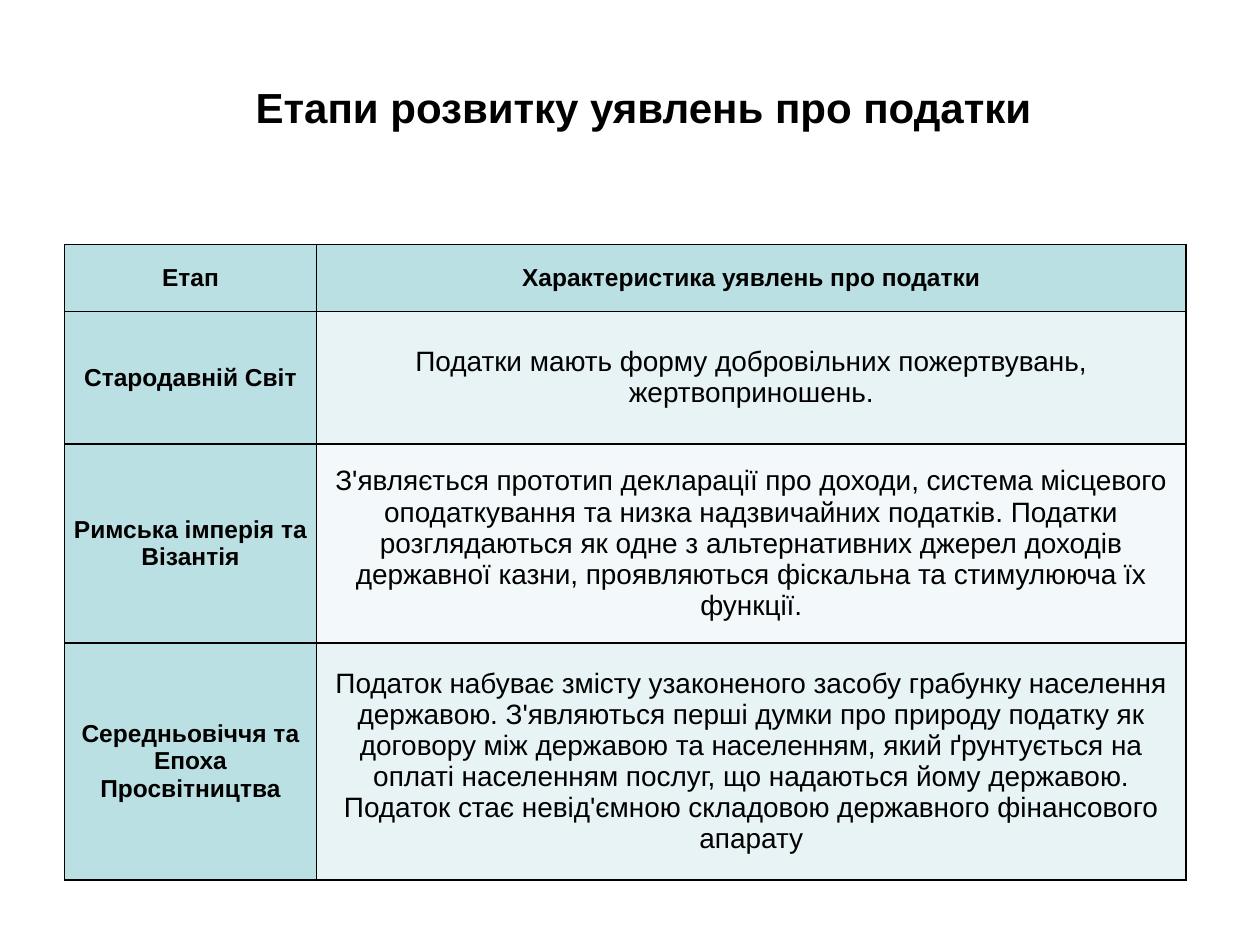
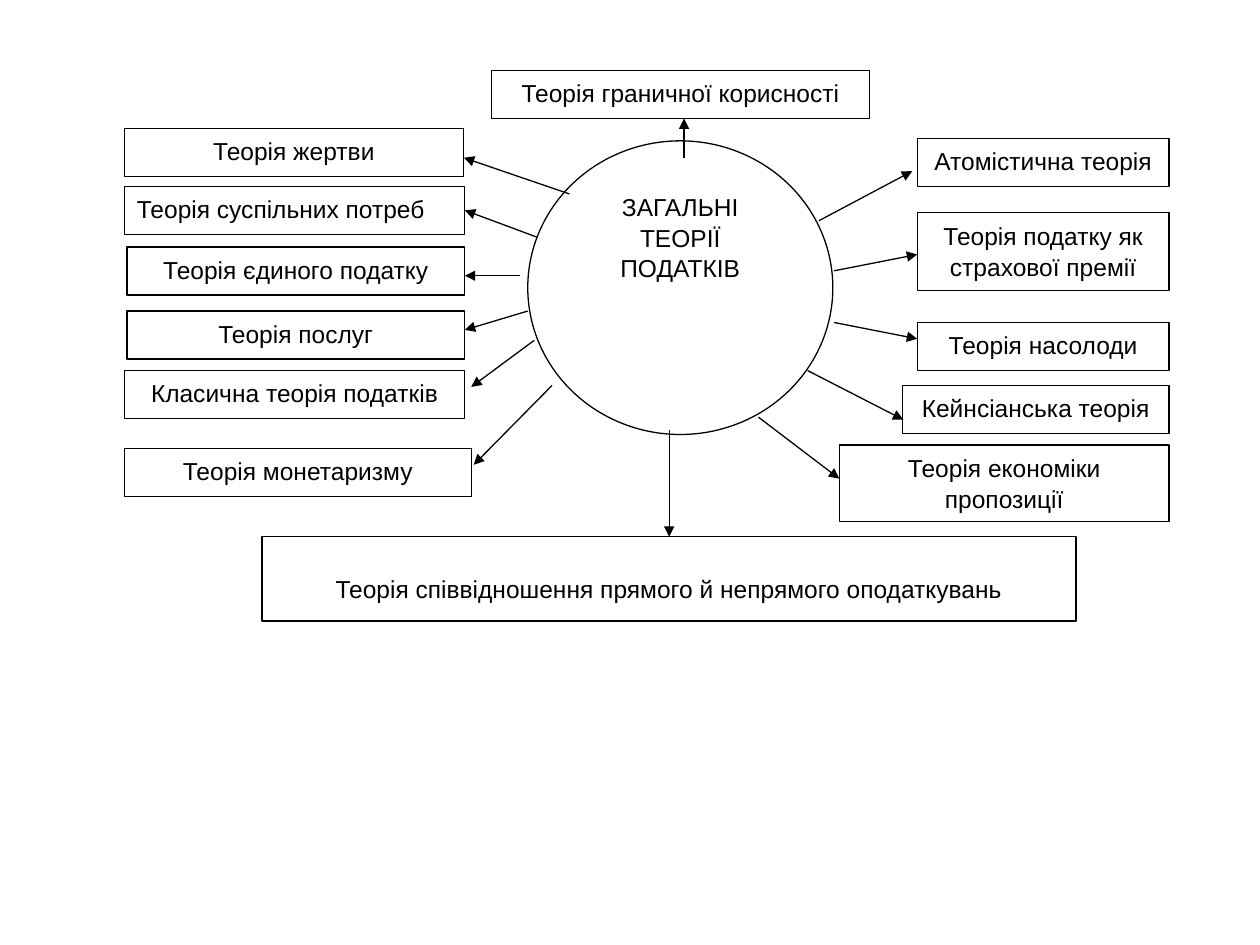
from dataclasses import dataclass

from lxml.etree import SubElement
from pptx import Presentation
from pptx.dml.color import RGBColor
from pptx.enum.shapes import MSO_CONNECTOR, MSO_SHAPE
from pptx.enum.text import MSO_ANCHOR, MSO_AUTO_SIZE, PP_ALIGN
from pptx.oxml.ns import qn
from pptx.util import Cm, Pt

BLACK = RGBColor(0x00, 0x00, 0x00)
WHITE = RGBColor(0xFF, 0xFF, 0xFF)
TEAL = RGBColor(0xBB, 0xE0, 0xE3)
ROW_TINTS = (RGBColor(0xE7, 0xF3, 0xF4), RGBColor(0xF3, 0xF9, 0xFA))

TITLE_FONT = {"name": "Arial", "size": Pt(24), "bold": True}
HEADING_FONT = {"name": "Arial", "size": Pt(14), "bold": True}
BODY_FONT = {"name": "Arial", "size": Pt(16), "bold": False}
THEORY_FONT = {"name": "Arial", "size": Pt(14), "bold": False}

TITLE_ONLY, BLANK = 5, 6

# Slide regions: left, top, width, height in cm
TITLE_BOX = (4.9, 1.52, 18.08, 1.27)
STAGES_BOX = (1.3, 4.93, 22.61, 12.81)
THEORIES_BOX = (2.51, 1.42, 21.06, 11.1)

STAGE_COLUMN = 5.08
STAGE_ROWS = (1.35, 2.67, 4.01, 4.78)
STAGES = (
    ("Етап", "Характеристика уявлень про податки"),
    ("Стародавній Світ",
     "Податки мають форму добровільних пожертвувань, жертвоприношень."),
    ("Римська імперія та Візантія",
     "З'являється прототип декларації про доходи, система місцевого "
     "оподаткування та низка надзвичайних податків. Податки розглядаються "
     "як одне з альтернативних джерел доходів державної казни, проявляються "
     "фіскальна та стимулююча їх функції."),
    ("Середньовіччя та Епоха Просвітництва",
     "Податок набуває змісту узаконеного засобу грабунку населення державою. "
     "З'являються перші думки про природу податку як договору між державою "
     "та населенням, який ґрунтується на оплаті населенням послуг, що "
     "надаються йому державою. Податок стає невід'ємною складовою "
     "державного фінансового апарату"),
)

LINE_HEIGHT = 0.97
HUB_BOX = (8.13, 1.42, 6.15, 5.92)


@dataclass
class Theory:
    """A boxed theory; its box and arrow are in cm within the diagram."""
    name: str
    box: tuple
    start: tuple
    end: tuple
    align: PP_ALIGN = PP_ALIGN.CENTER
    inset_top: float = 0.13


def right_box(top, width, height=LINE_HEIGHT):
    """Box that ends at the right edge of the diagram."""
    return THEORIES_BOX[2] - width, top, width, height


THEORIES = (
    Theory("Теорія граничної корисності", (7.4, 0, 7.62, LINE_HEIGHT),
           (11.28, 1.76), (11.28, 0.97)),
    Theory("Теорія жертви", (0, 1.17, 6.83, LINE_HEIGHT),
           (8.97, 2.49), (6.84, 1.76)),
    Theory("Теорія суспільних потреб", (0, 2.34, 6.86, LINE_HEIGHT),
           (8.31, 3.36), (6.86, 2.82), align=PP_ALIGN.LEFT),
    Theory("Теорія єдиного податку", (0.05, 3.56, 6.81, LINE_HEIGHT),
           (7.98, 4.14), (6.86, 4.14)),
    Theory("Теорія послуг", (0.05, 4.85, 6.81, LINE_HEIGHT),
           (8.13, 4.85), (6.86, 5.23)),
    Theory("Класична теорія податків", (0, 6.05, 6.86, LINE_HEIGHT),
           (8.26, 5.44), (6.99, 6.38)),
    Theory("Теорія монетаризму", (0, 7.62, 6.99, LINE_HEIGHT),
           (8.62, 6.35), (7.04, 7.95)),
    Theory("Атомістична теорія", right_box(1.37, 5.08),
           (14, 3.03), (15.88, 2.03)),
    Theory("Теорія податку як страхової премії", right_box(2.87, 5.08, 1.57),
           (14.3, 4.04), (15.98, 3.71)),
    Theory("Теорія насолоди", right_box(5.08, 5.08),
           (14.3, 5.08), (15.98, 5.41)),
    Theory("Кейнсіанська теорія", right_box(6.35, 5.38),
           (13.77, 6.05), (15.7, 7.04)),
    Theory("Теорія економіки пропозиції", right_box(7.55, 6.65, 1.55),
           (12.78, 6.99), (14.41, 8.23)),
    Theory("Теорія співвідношення прямого й непрямого оподаткувань",
           (2.77, 9.4, 16.41, 1.7), (10.98, 7.24), (10.98, 9.4),
           inset_top=0.73),
)


def set_all(target, values):
    for attribute, value in values.items():
        setattr(target, attribute, value)


def write(frame, text, font, align=PP_ALIGN.CENTER, line_spacing=None):
    frame.text = text
    for paragraph in frame.paragraphs:
        set_all(paragraph, {"alignment": align, "line_spacing": line_spacing})
        for run in paragraph.runs:
            set_all(run.font, font)
            run.font.color.rgb = BLACK


def add_title(slide, text, box):
    title = slide.shapes.title
    set_all(title, dict(zip(("left", "top", "width", "height"), map(Cm, box))))
    set_all(title.text_frame, {"vertical_anchor": MSO_ANCHOR.TOP,
                               "auto_size": MSO_AUTO_SIZE.NONE,
                               "word_wrap": True})
    write(title.text_frame, text, TITLE_FONT, PP_ALIGN.LEFT)


def add_cell_borders(cell):
    properties = cell._tc.get_or_add_tcPr()
    for index, side in enumerate(("a:lnL", "a:lnR", "a:lnT", "a:lnB")):
        border = properties.makeelement(qn(side), {"w": str(Pt(1))})
        fill = SubElement(border, qn("a:solidFill"))
        SubElement(fill, qn("a:srgbClr"), val=str(BLACK))
        properties.insert(index, border)


def add_stages_table(slide, box):
    table = slide.shapes.add_table(len(STAGES), 2, *map(Cm, box)).table
    table.columns[0].width = Cm(STAGE_COLUMN)
    table.columns[1].width = Cm(box[2] - STAGE_COLUMN)
    for row, (height, texts) in enumerate(zip(STAGE_ROWS, STAGES)):
        table.rows[row].height = Cm(height)
        for column, text in enumerate(texts):
            heading = row == 0 or column == 0
            cell = table.cell(row, column)
            set_all(cell, {"margin_left": 0, "margin_right": 0,
                           "margin_top": 0, "margin_bottom": 0,
                           "vertical_anchor": MSO_ANCHOR.MIDDLE})
            cell.fill.solid()
            cell.fill.fore_color.rgb = TEAL if heading else ROW_TINTS[(row - 1) % 2]
            write(cell.text_frame, text, HEADING_FONT if heading else BODY_FONT)
            add_cell_borders(cell)


def add_outlined(slide, preset, box, text, align=PP_ALIGN.CENTER, inset_top=0.13):
    shape = slide.shapes.add_shape(preset, *map(Cm, box))
    shape.shadow.inherit = False
    shape.fill.solid()
    shape.fill.fore_color.rgb = WHITE
    shape.line.color.rgb = BLACK
    shape.line.width = Pt(0.75)
    set_all(shape.text_frame, {"word_wrap": True, "margin_top": Cm(inset_top),
                               "vertical_anchor": MSO_ANCHOR.TOP})
    write(shape.text_frame, text, THEORY_FONT, align, line_spacing=1.05)


def add_arrow(slide, start, end):
    arrow = slide.shapes.add_connector(MSO_CONNECTOR.STRAIGHT,
                                       *map(Cm, (*start, *end)))
    arrow.line.color.rgb = BLACK
    arrow.line.width = Pt(0.75)
    SubElement(arrow.line._get_or_add_ln(), qn("a:tailEnd"), type="triangle")
    SubElement(arrow._element.spPr, qn("a:effectLst"))


def add_theories_diagram(slide, box):
    left, top = box[:2]

    def place(x, y, *size):
        return left + x, top + y, *size

    add_outlined(slide, MSO_SHAPE.OVAL, place(*HUB_BOX),
                 "ЗАГАЛЬНІ\nТЕОРІЇ ПОДАТКІВ")
    for theory in THEORIES:
        add_outlined(slide, MSO_SHAPE.RECTANGLE, place(*theory.box),
                     theory.name, theory.align, theory.inset_top)
    for theory in THEORIES:
        add_arrow(slide, place(*theory.start), place(*theory.end))


def main():
    deck = Presentation()
    set_all(deck, {"slide_width": Cm(25.4), "slide_height": Cm(19.05)})

    stages = deck.slides.add_slide(deck.slide_layouts[TITLE_ONLY])
    add_stages_table(stages, STAGES_BOX)
    add_title(stages, "Етапи розвитку уявлень про податки", TITLE_BOX)

    theories = deck.slides.add_slide(deck.slide_layouts[BLANK])
    add_theories_diagram(theories, THEORIES_BOX)

    deck.save("out.pptx")


if __name__ == "__main__":
    main()
